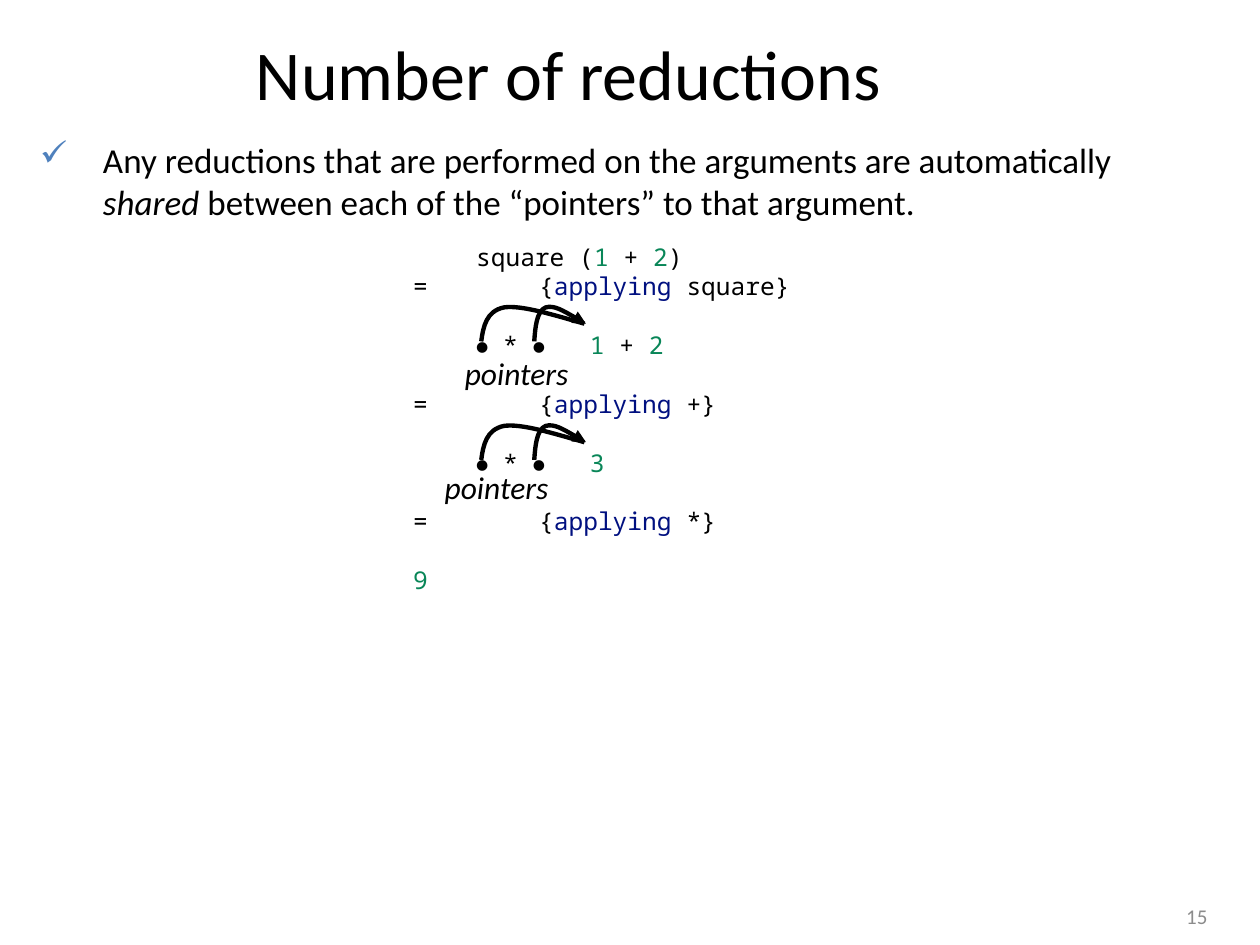
from dataclasses import dataclass

from lxml import etree
from pptx import Presentation
from pptx import util as u
from pptx.dml.color import RGBColor
from pptx.enum import shapes, text
from pptx.oxml.ns import qn

Pt = u.Pt


@dataclass(frozen=True)
class Theme:
    sans: str = "Calibri"
    mono: str = "Noto Sans Mono"
    ink: str = "000000"
    paper: str = "FFFFFF"
    number: str = "098658"
    keyword: str = "001080"
    bullet: str = "4F81BD"
    muted: str = "8C8C8C"
    title_size: float = 40
    body_size: float = 20
    label_size: float = 18
    code_size: float = 14
    code_pitch: float = 16.8
    footer_size: float = 12
    arrow_width: float = 2.5


T = Theme()


@dataclass(frozen=True)
class Box:
    left: float
    top: float
    width: float
    height: float

    def lengths(self) -> list:
        return [Pt(v) for v in (self.left, self.top, self.width, self.height)]


@dataclass(frozen=True)
class CodeLine:
    tokens: tuple  # (text, colour) pairs
    skipped: int = 0  # empty lines above


@dataclass(frozen=True)
class Pointer:
    x: float
    y: float
    reach: float
    head: bool = False


def format_run(r, size: float, color: str = T.ink, font: str = T.sans, italic: bool = False) -> None:
    r.font.size, r.font.name, r.font.italic = Pt(size), font, italic
    r.font.color.rgb = RGBColor.from_string(color)


def add_text(s, box: Box, content: str, size: float, color: str = T.ink,
             align=text.PP_ALIGN.LEFT, anchor=text.MSO_ANCHOR.TOP,
             wrap: bool = True, italic: bool = False):
    tf = s.shapes.add_textbox(*box.lengths()).text_frame
    tf.word_wrap, tf.vertical_anchor = wrap, anchor
    p = tf.paragraphs[0]
    p.text, p.alignment = content, align
    for r in p.runs:
        format_run(r, size, color, italic=italic)
    return p


def add_check_bullet(p, indent: float) -> None:
    pPr = p._p.get_or_add_pPr()
    pPr.set("marL", str(Pt(indent)))
    pPr.set("indent", str(-Pt(indent)))
    color = etree.SubElement(pPr, qn("a:buClr"))
    etree.SubElement(color, qn("a:srgbClr"), val=T.bullet)
    etree.SubElement(pPr, qn("a:buChar"), char="✓")


def add_code(s, box: Box, lines: list[CodeLine], tabs: tuple) -> None:
    sp = s.shapes.add_shape(shapes.MSO_SHAPE.RECTANGLE, *box.lengths())
    sp.shadow.inherit = False
    sp.fill.solid()
    sp.fill.fore_color.rgb = RGBColor.from_string(T.paper)
    sp.line.fill.background()
    tf = sp.text_frame
    tf.word_wrap, tf.vertical_anchor = True, text.MSO_ANCHOR.TOP
    for i, line in enumerate(lines):
        p = tf.add_paragraph() if i else tf.paragraphs[0]
        p.alignment = text.PP_ALIGN.LEFT
        p.line_spacing = Pt(T.code_pitch)
        p.space_before = Pt(T.code_pitch * line.skipped)
        stops = etree.SubElement(p._p.get_or_add_pPr(), qn("a:tabLst"))
        for stop in tabs:
            etree.SubElement(stops, qn("a:tab"), pos=str(Pt(stop)), algn="l")
        for content, color in line.tokens:
            r = p.add_run()
            r.text = content
            format_run(r, T.code_size, color, T.mono)


# Two joined Bezier curves: x as a share of the reach, y in points
CURVE = ((0.02, -8.6), (0.05, -17.3), (0.22, -19.4),
         (0.39, -20.9), (0.7, -15.1), (1, -10.1))


def add_pointer(s, a: Pointer) -> None:
    builder = s.shapes.build_freeform(Pt(a.x), Pt(a.y))
    builder.add_line_segments(
        [(Pt(a.x + fx * a.reach), Pt(a.y + dy)) for fx, dy in CURVE], close=False)
    sp = builder.convert_to_shape()
    sp.shadow.inherit = False
    sp.fill.background()
    sp.line.width = Pt(T.arrow_width)
    sp.line.color.rgb = RGBColor.from_string(T.ink)
    # Turn each three straight segments into one cubic curve
    outline = next(sp._element.iter(qn("a:path")))
    segments = outline.findall(qn("a:lnTo"))
    for i in range(0, len(segments), 3):
        curve = etree.SubElement(outline, qn("a:cubicBezTo"))
        for segment in segments[i:i + 3]:
            curve.append(segment[0])
            outline.remove(segment)
    if a.head:
        etree.SubElement(sp.line._get_or_add_ln(), qn("a:tailEnd"), type="triangle")


def applying(what: str, skipped: int = 0) -> CodeLine:
    return CodeLine((("=\t\t{", T.ink), ("applying", T.keyword),
                     (f" {what}}}", T.ink)), skipped)


SUM = (("1", T.number), (" + ", T.ink), ("2", T.number))
PRODUCT = ("\t⦁ * ⦁\t", T.ink)
CODE = [
    CodeLine((("\tsquare (", T.ink), *SUM, (")", T.ink))),
    applying("square"),
    CodeLine((PRODUCT, *SUM), 1),
    applying("+", 1),
    CodeLine((PRODUCT, ("3", T.number)), 1),
    applying("*", 1),
    CodeLine((("9", T.number),), 1),
]


def main() -> None:
    prs = Presentation()
    prs.slide_width, prs.slide_height = Pt(720), Pt(540)
    s = prs.slides.add_slide(prs.slide_layouts[5])

    # Title
    title = s.shapes.title
    title.left, title.top, title.width, title.height = Box(15.8, 19.4, 627, 44).lengths()
    tf = title.text_frame
    tf.text = "Number of reductions "
    tf.vertical_anchor = text.MSO_ANCHOR.MIDDLE
    tf.paragraphs[0].alignment = text.PP_ALIGN.CENTER
    format_run(tf.paragraphs[0].runs[0], T.title_size)

    # Statement with a check mark
    p = add_text(s, Box(15.8, 75.6, 681, 414),
                 "Any reductions that are performed on the arguments are automatically ",
                 T.body_size)
    add_check_bullet(p, 36)
    for content, italic in (("shared", True),
                            (" between each of the “pointers” to that argument.", False)):
        r = p.add_run()
        r.text = content
        format_run(r, T.body_size, italic=italic)

    # Slide number
    add_text(s, Box(529, 509, 168, 28.8), "15", T.footer_size, T.muted,
             text.PP_ALIGN.RIGHT, text.MSO_ANCHOR.MIDDLE)

    # Evaluation steps
    add_code(s, Box(229, 134.6, 231, 211), CODE, tabs=(36, 72, 101))

    # Pointers from both operands to the shared argument
    for y in (195.1, 262.8):
        add_pointer(s, Pointer(275, y, 59))
        add_pointer(s, Pointer(305.3, y, 29.5, head=True))

    # Pointer labels
    for x, y in ((258.5, 198.7), (247, 264.2)):
        add_text(s, Box(x, y, 75.6, 28.8), "pointers", T.label_size,
                 wrap=False, italic=True)

    prs.save("out.pptx")


if __name__ == "__main__":
    main()
